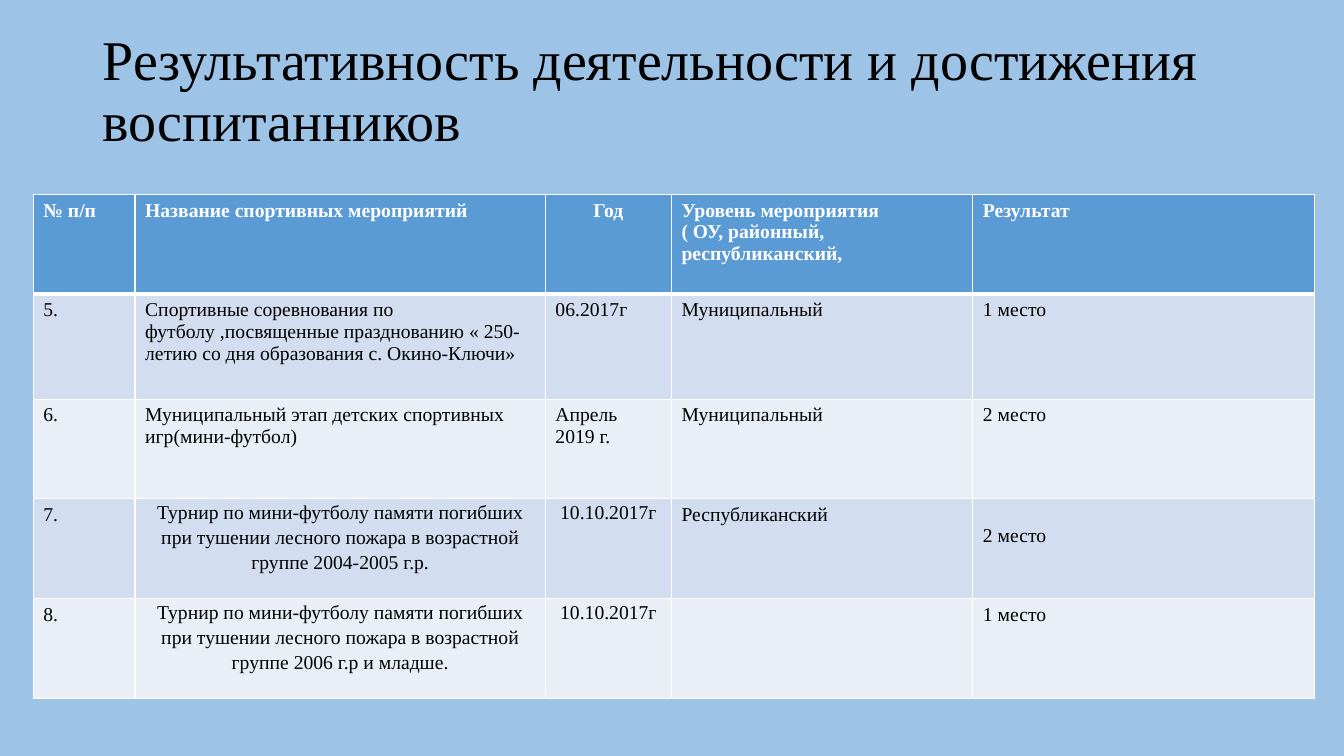
from lxml import etree
from pptx import Presentation
from pptx.dml.color import RGBColor
from pptx.enum import text
from pptx.oxml import ns
from pptx.util import Inches, Pt

SKY = RGBColor(0x9D, 0xC3, 0xE6)
BLUE = RGBColor(0x5B, 0x9B, 0xD5)
BANDS = (RGBColor(0xD2, 0xDE, 0xEF), RGBColor(0xEA, 0xEF, 0xF7))
BLACK = RGBColor(0, 0, 0)
WHITE = RGBColor(255, 255, 255)
FONT = "Times New Roman"
CENTER = text.PP_ALIGN.CENTER

COLUMNS = (1.01, 4.07, 1.25, 2.99, 3.39)
ROWS = (0.99, 1.04, 0.99, 0.99, 0.99)
TOURNAMENT = "Турнир по мини-футболу памяти погибших при тушении лесного пожара в возрастной группе "
RESULTS = (
    ("№ п/п", "Название спортивных мероприятий", "Год",
     "Уровень мероприятия\n( ОУ, районный, республиканский,", "Результат"),
    ("5.", "Спортивные соревнования по футболу ,посвященные празднованию "
     "« 250-летию со дня образования с. Окино-Ключи»",
     "06.2017г", "Муниципальный", "1 место"),
    ("6.", "Муниципальный этап детских спортивных игр(мини-футбол)",
     "Апрель 2019 г.", "Муниципальный", "2 место"),
    ("7.", TOURNAMENT + "2004-2005 г.р.", "10.10.2017г", "Республиканский", "2 место"),
    ("8.", TOURNAMENT + "2006 г.р и младше.", "10.10.2017г", "", "1 место"),
)


def write(tf, content, size=14, color=BLACK, bold=False, align=None, spacing=None):
    tf.word_wrap = True
    for i, line in enumerate(content.split("\n")):
        p = tf.add_paragraph() if i else tf.paragraphs[0]
        p.alignment = align
        p.line_spacing = spacing
        r = p.add_run()
        r.text = line
        r.font.name, r.font.size, r.font.bold = FONT, Pt(size), bold
        r.font.color.rgb = color


def set_borders(cell, bottom):
    """White cell borders; they precede the fill in the cell properties."""
    tc_pr = cell._tc.get_or_add_tcPr()
    for i, (side, width) in enumerate((("L", 1), ("R", 1), ("T", 1), ("B", bottom))):
        ln = etree.Element(ns.qn("a:ln" + side), w=str(Pt(width)))
        fill = etree.SubElement(ln, ns.qn("a:solidFill"))
        etree.SubElement(fill, ns.qn("a:srgbClr"), val=str(WHITE))
        tc_pr.insert(i, ln)


def add_title(slide, left, top, width, height):
    sp = slide.shapes.add_textbox(*map(Inches, (left, top, width, height)))
    write(sp.text_frame, "Результативность деятельности и достижения воспитанников",
          size=40, spacing=0.9)


def add_results(slide, left, top):
    box = map(Inches, (left, top, sum(COLUMNS), sum(ROWS)))
    table = slide.shapes.add_table(len(ROWS), len(COLUMNS), *box).table
    for column, width in zip(table.columns, COLUMNS):
        column.width = Inches(width)
    for row, height in zip(table.rows, ROWS):
        row.height = Inches(height)

    for i, values in enumerate(RESULTS):
        header = i == 0
        for j, value in enumerate(values):
            cell = table.cell(i, j)
            cell.fill.solid()
            cell.fill.fore_color.rgb = BLUE if header else BANDS[(i - 1) % 2]
            set_borders(cell, bottom=3 if header else 1)
            # Tournament names and dates are centred with looser lines
            loose = i >= 3 and j in (1, 2)
            if loose:
                cell.margin_left = cell.margin_right = Inches(0.07)
                cell.margin_top = cell.margin_bottom = 0
            write(cell.text_frame, value, color=WHITE if header else BLACK, bold=header,
                  align=CENTER if loose or (header and j == 2) else None,
                  spacing=1.15 if loose else None)
    # The result of event 7 sits one line lower
    table.cell(3, 4).margin_top = Inches(0.26)


def main():
    prs = Presentation()
    prs.slide_width, prs.slide_height = Inches(13.33), Inches(7.5)
    slide = prs.slides.add_slide(prs.slide_layouts[6])
    slide.background.fill.solid()
    slide.background.fill.fore_color.rgb = SKY
    add_title(slide, 0.92, 0.27, 11.5, 1.3)
    add_results(slide, 0.33, 1.93)
    prs.save("out.pptx")


if __name__ == "__main__":
    main()
